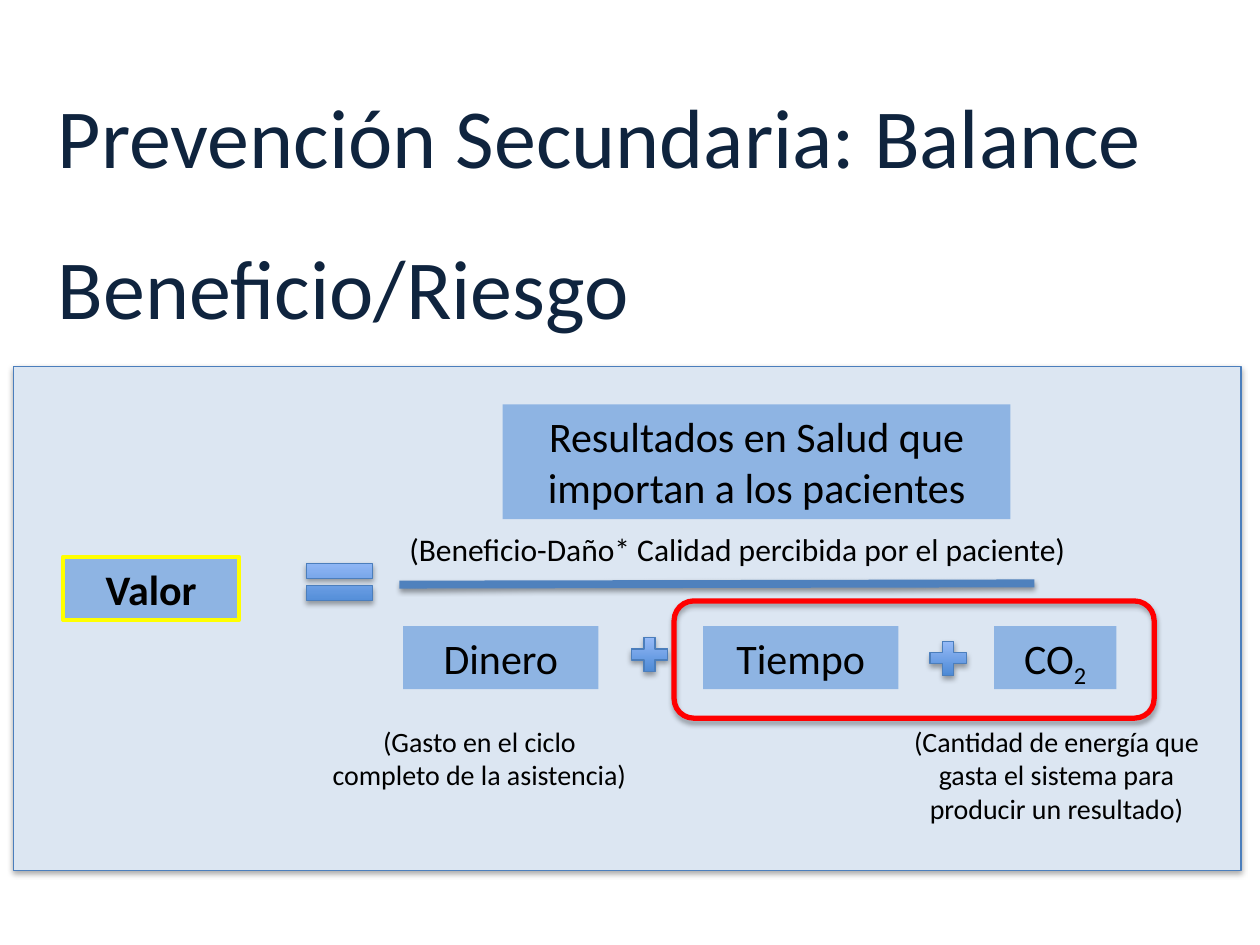
import pptx
import pptx.util
import pptx.dml.color
import pptx.enum.shapes
import pptx.enum.text
import pptx.oxml.ns
from lxml import etree

RGBColor = pptx.dml.color.RGBColor
SHAPE = pptx.enum.shapes.MSO_SHAPE
ALIGN = pptx.enum.text.PP_ALIGN
ANCHOR = pptx.enum.text.MSO_ANCHOR

NAVY = RGBColor(0x0F, 0x24, 0x3E)
BLACK = RGBColor(0x00, 0x00, 0x00)
PANEL_BLUE = RGBColor(0xDC, 0xE6, 0xF2)
LABEL_BLUE = RGBColor(0x8E, 0xB4, 0xE3)
OUTLINE_BLUE = RGBColor(0x4B, 0x7E, 0xBC)
BAR_BLUE = RGBColor(0x4F, 0x81, 0xBD)
SIGN_DARK = RGBColor(0x3F, 0x80, 0xCE)
SIGN_LIGHT = RGBColor(0xA4, 0xC4, 0xFF)
YELLOW = RGBColor(0xFF, 0xFF, 0x00)
RED = RGBColor(0xFF, 0x00, 0x00)

FONT = "Calibri"
UNIT = 0.1  # one grid column or row, in inches
COLUMNS, ROWS = 100, 75


def grid(count):
    return pptx.util.Inches(count * UNIT)


def inside(box, left, top, width, height):
    """Box of the given grid size, offset from the corner of another box."""
    return box[0] + left, box[1] + top, width, height


def add_shadow(shape, opacity=35, distance=1.8):
    """Soft shadow straight below; call after fill and line are set."""
    qn = pptx.oxml.ns.qn
    properties = shape._element.spPr
    for effects in properties.findall(qn("a:effectLst")):
        properties.remove(effects)
    effects = etree.SubElement(properties, qn("a:effectLst"))
    shadow = etree.SubElement(
        effects, qn("a:outerShdw"), blurRad=str(pptx.util.Pt(3.1)),
        dist=str(pptx.util.Pt(distance)), dir="5400000", rotWithShape="0")
    color = etree.SubElement(shadow, qn("a:srgbClr"), val="000000")
    etree.SubElement(color, qn("a:alpha"), val=str(opacity * 1000))


def add_run(paragraph, text, size, color=BLACK, bold=None, baseline=None):
    run = paragraph.add_run()
    run.text = text
    run.font.name = FONT
    run.font.size = pptx.util.Pt(size)
    run.font.color.rgb = color
    run.font.bold = bold
    if baseline is not None:
        run._r.get_or_add_rPr().set("baseline", str(baseline * 1000))


def add_figure(slide, kind, box, fill=None, line=None, width=0.75):
    shape = slide.shapes.add_shape(kind, *map(grid, box))
    shape.shadow.inherit = False
    if fill is None:
        shape.fill.background()
    else:
        shape.fill.solid()
        shape.fill.fore_color.rgb = fill
    if line is None:
        shape.line.fill.background()
    else:
        shape.line.color.rgb = line
        shape.line.width = pptx.util.Pt(width)
    return shape


def add_label(slide, box, text, subscript=None, bold=None, line=None):
    shape = add_figure(slide, SHAPE.RECTANGLE, box, LABEL_BLUE, line, 2.25)
    shape.text_frame.word_wrap = True
    shape.text_frame.vertical_anchor = ANCHOR.TOP
    paragraph = shape.text_frame.paragraphs[0]
    paragraph.alignment = ALIGN.CENTER
    add_run(paragraph, text, 24, bold=bold)
    if subscript:
        add_run(paragraph, subscript, 24, baseline=-25)


def add_sign(slide, kind, box):
    shape = add_figure(slide, kind, box, line=OUTLINE_BLUE)
    shape.fill.gradient()
    shape.fill.gradient_angle = 90
    for stop, color, position in zip(
            shape.fill.gradient_stops, (SIGN_DARK, SIGN_LIGHT), (0, 1)):
        stop.color.rgb = color
        stop.position = position
    add_shadow(shape)


def add_note(slide, box, text, size, alignment=ALIGN.CENTER):
    note = slide.shapes.add_textbox(*map(grid, box))
    note.text_frame.word_wrap = True
    paragraph = note.text_frame.paragraphs[0]
    paragraph.alignment = alignment
    add_run(paragraph, text, size)


def build_title(slide, box):
    title = slide.shapes.title
    title.left, title.top, title.width, title.height = map(grid, box)
    title.text_frame.word_wrap = True
    title.text_frame.auto_size = pptx.enum.text.MSO_AUTO_SIZE.NONE
    title.text_frame.vertical_anchor = ANCHOR.TOP
    paragraph = title.text_frame.paragraphs[0]
    paragraph.alignment = ALIGN.LEFT
    paragraph.line_spacing = 1.5
    paragraph.space_before = pptx.util.Pt(0)
    paragraph.space_after = pptx.util.Pt(6)
    add_run(paragraph, "Prevención Secundaria: Balance Beneficio/Riesgo", 48, NAVY)


def build_value(slide, box):
    """Left side of the equation."""
    add_label(slide, inside(box, 0, 0.5, 14, 5), "Valor", bold=True, line=YELLOW)
    add_sign(slide, SHAPE.MATH_EQUAL, inside(box, 18.4, 0, 7.1, 5))


def build_numerator(slide, box):
    """Health results above the fraction bar."""
    left, top, width, height = box
    bar = slide.shapes.add_connector(
        pptx.enum.shapes.MSO_CONNECTOR.STRAIGHT, grid(left + 0.2),
        grid(top + 14.3), grid(left + 50.6), grid(top + 14.2))
    bar.line.color.rgb = BAR_BLUE
    bar.line.width = pptx.util.Pt(4.5)
    add_shadow(bar, opacity=38, distance=1.6)
    add_label(slide, inside(box, 8.4, 0, 40.3, 9.1),
              "Resultados en Salud que importan a los pacientes")
    add_note(slide, inside(box, 0, 9.5, width, 4),
             "(Beneficio-Daño* Calidad percibida por el paciente)", 18, ALIGN.LEFT)


def build_denominator(slide, box):
    """Costs below the fraction bar, with their notes and the highlight."""
    costs = [(6.7, 15.5, "Dinero", None), (30.5, 15.5, "Tiempo", None),
             (53.6, 9.7, "CO", "2")]
    for left, width, text, subscript in costs:
        add_label(slide, inside(box, left, 2, width, 5), text, subscript)
    for left, top in [(24.3, 2.4), (48, 2.7)]:
        add_sign(slide, SHAPE.MATH_PLUS, inside(box, left, top, 3.9, 3.7))
    notes = [(0, 6.4, "(Gasto en el ciclo completo de la asistencia)"),
             (45.8, 9.1, "(Cantidad de energía que gasta el sistema "
                         "para producir un resultado)")]
    for left, height, text in notes:
        add_note(slide, inside(box, left, 9.3, 25.5, height), text, 16)
    highlight = add_figure(slide, SHAPE.ROUNDED_RECTANGLE,
                           inside(box, 28.2, 0, 38.1, 9.3), line=RED, width=3)
    add_shadow(highlight)


def build_equation(slide, box):
    panel = add_figure(slide, SHAPE.RECTANGLE, box, PANEL_BLUE, OUTLINE_BLUE)
    add_shadow(panel)
    build_value(slide, inside(box, 3.9, 14.6, 25.5, 5.5))
    build_numerator(slide, inside(box, 30.4, 3, 56.4, 14.3))
    build_denominator(slide, inside(box, 24.2, 18.6, 71.3, 18.4))


def main():
    presentation = pptx.Presentation()
    presentation.slide_width = grid(COLUMNS)
    presentation.slide_height = grid(ROWS)
    slide = presentation.slides.add_slide(
        presentation.slide_layouts.get_by_name("Title Only"))
    build_title(slide, (3.6, 2.2, 93.4, 27))
    build_equation(slide, (1.1, 29.1, 97.4, 40))
    presentation.save("out.pptx")


if __name__ == "__main__":
    main()
